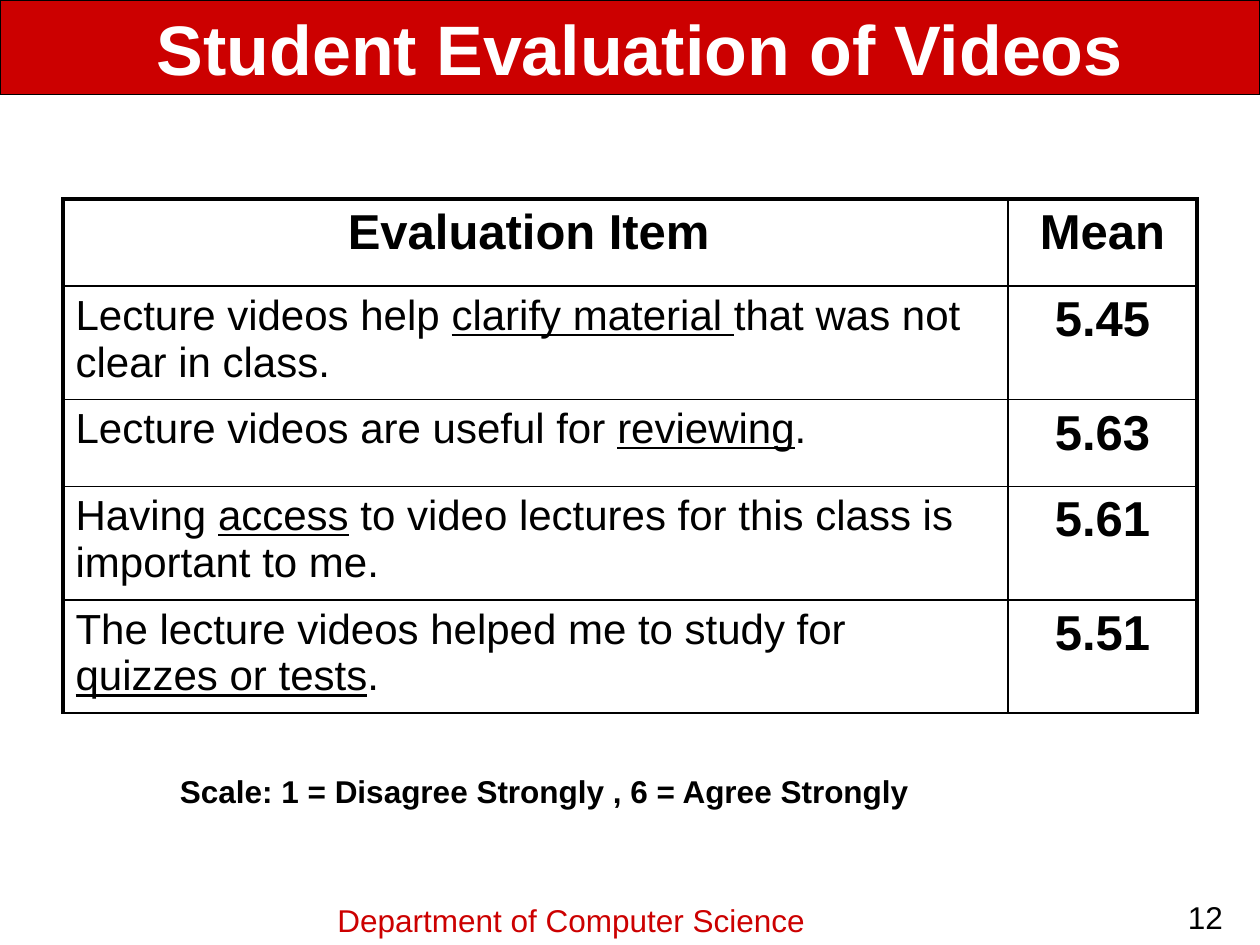
"""Build the slide with the student ratings of lecture videos."""
from dataclasses import dataclass
from typing import NamedTuple

from lxml.etree import SubElement
from pptx import Presentation
from pptx.dml.color import RGBColor
from pptx.enum.shapes import MSO_SHAPE as Preset
from pptx.enum.text import MSO_ANCHOR as Anchor, PP_ALIGN as Align
from pptx.oxml.ns import qn
from pptx.util import Inches, Pt

COLORS = {"banner": "CC0000", "ink": "000000", "paper": "FFFFFF"}
GRID_COLUMNS, GRID_ROWS = 100, 75
THICK, THIN = 2.25, 1
FORMATS = {
    "title": {"size": Pt(40), "bold": True},
    "heading": {"size": Pt(28), "bold": True},
    "item": {"size": Pt(24), "bold": False},
    "note": {"size": Pt(18), "bold": True},
    "footer": {"size": Pt(18), "bold": False},
}


class Area(NamedTuple):
    column: float
    row: float
    columns: float
    rows: float


@dataclass
class Label:
    text: str
    area: Area
    style: str
    color: str = "ink"
    align: Align = Align.LEFT
    anchor: Anchor = Anchor.TOP


@dataclass
class Rating:
    before: str
    stressed: str
    after: str
    mean: str
    rows: float


LABELS = [
    Label("Department of Computer Science", Area(25.8, 71, 39.5, 4), "footer", "banner"),
    Label("12", Area(93.3, 70.8, 5, 4), "footer"),
    Label("Student Evaluation of Videos", Area(5.8, 0, 90, 7.5), "title", "paper",
          Align.CENTER, Anchor.MIDDLE),
    Label("Scale: 1 = Disagree Strongly , 6 = Agree Strongly",
          Area(13.3, 60.8, 60.6, 4), "note"),
]
HEADINGS = ["Evaluation Item ", "Mean"]
HEADING_ROWS = 6.9
TABLE_COLUMNS = [75, 15]
RATINGS = [
    Rating("Lecture videos help ", "clarify material ", "that was not clear in class.",
           "5.45", 8.8),
    Rating("Lecture videos are useful for ", "reviewing", ".", "5.63", 6.9),
    Rating("Having ", "access", " to video lectures for this class is important to me.",
           "5.61", 8.4),
    Rating("The lecture videos helped me to study for ", "quizzes or tests", ".",
           "5.51", 8.4),
]

deck = Presentation()
deck.slide_width, deck.slide_height = Inches(10), Inches(7.5)
slide = deck.slides.add_slide(deck.slide_layouts[6])


def across(columns: float) -> int:
    return round(deck.slide_width * columns / GRID_COLUMNS)


def down(rows: float) -> int:
    return round(deck.slide_height * rows / GRID_ROWS)


def place(area: Area) -> tuple[int, int, int, int]:
    return across(area.column), down(area.row), across(area.columns), down(area.rows)


def rgb(color: str) -> RGBColor:
    return RGBColor.from_string(COLORS[color])


def write(paragraph, text: str, style: str, color: str = "ink", underline: bool = False) -> None:
    run = paragraph.add_run()
    run.text = text
    run.font.color.rgb = rgb(color)
    for name, value in {"name": "Arial", "underline": underline, **FORMATS[style]}.items():
        setattr(run.font, name, value)


def draw_banner(area: Area) -> None:
    banner = slide.shapes.add_shape(Preset.RECTANGLE, *place(area))
    banner.shadow.inherit = False
    banner.fill.solid()
    banner.fill.fore_color.rgb = rgb("banner")
    banner.line.color.rgb = rgb("ink")
    banner.line.width = Pt(0.75)


def draw_label(label: Label) -> None:
    frame = slide.shapes.add_textbox(*place(label.area)).text_frame
    frame.word_wrap = True
    frame.vertical_anchor = label.anchor
    frame.paragraphs[0].alignment = label.align
    write(frame.paragraphs[0], label.text, label.style, label.color)


def draw_borders(cell, widths: dict[str, float]) -> None:
    properties = cell._tc.get_or_add_tcPr()
    for index, (side, width) in enumerate(widths.items()):
        border = SubElement(properties, qn(f"a:ln{side}"), w=str(Pt(width)))
        fill = SubElement(border, qn("a:solidFill"))
        SubElement(fill, qn("a:srgbClr"), val=COLORS["ink"])
        properties.insert(index, border)


def draw_ratings(column: float, row: float) -> None:
    heights = [HEADING_ROWS] + [rating.rows for rating in RATINGS]
    area = Area(column, row, sum(TABLE_COLUMNS), sum(heights))
    table = slide.shapes.add_table(len(heights), len(TABLE_COLUMNS), *place(area)).table
    table.first_row = table.horz_banding = False
    for table_column, width in zip(table.columns, TABLE_COLUMNS):
        table_column.width = across(width)
    for table_row, height in zip(table.rows, heights):
        table_row.height = down(height)

    for row_index in range(len(heights)):
        for column_index in range(len(TABLE_COLUMNS)):
            cell = table.cell(row_index, column_index)
            cell.fill.background()
            draw_borders(cell, {
                "L": THIN if column_index else THICK,
                "R": THICK if column_index else THIN,
                "T": THIN if row_index else THICK,
                "B": THIN,
            })
            paragraph = cell.text_frame.paragraphs[0]
            centred = row_index == 0 or column_index == 1
            paragraph.alignment = Align.CENTER if centred else Align.LEFT
            if row_index == 0:
                write(paragraph, HEADINGS[column_index], "heading")
                continue
            rating = RATINGS[row_index - 1]
            if column_index:
                write(paragraph, rating.mean, "heading")
            else:
                write(paragraph, rating.before, "item")
                write(paragraph, rating.stressed, "item", underline=True)
                write(paragraph, rating.after, "item")


def main() -> None:
    draw_banner(Area(0, 0, GRID_COLUMNS, 7.5))
    for label in LABELS[:-1]:
        draw_label(label)
    draw_ratings(5, 15.8)
    draw_label(LABELS[-1])
    deck.save("out.pptx")


if __name__ == "__main__":
    main()
